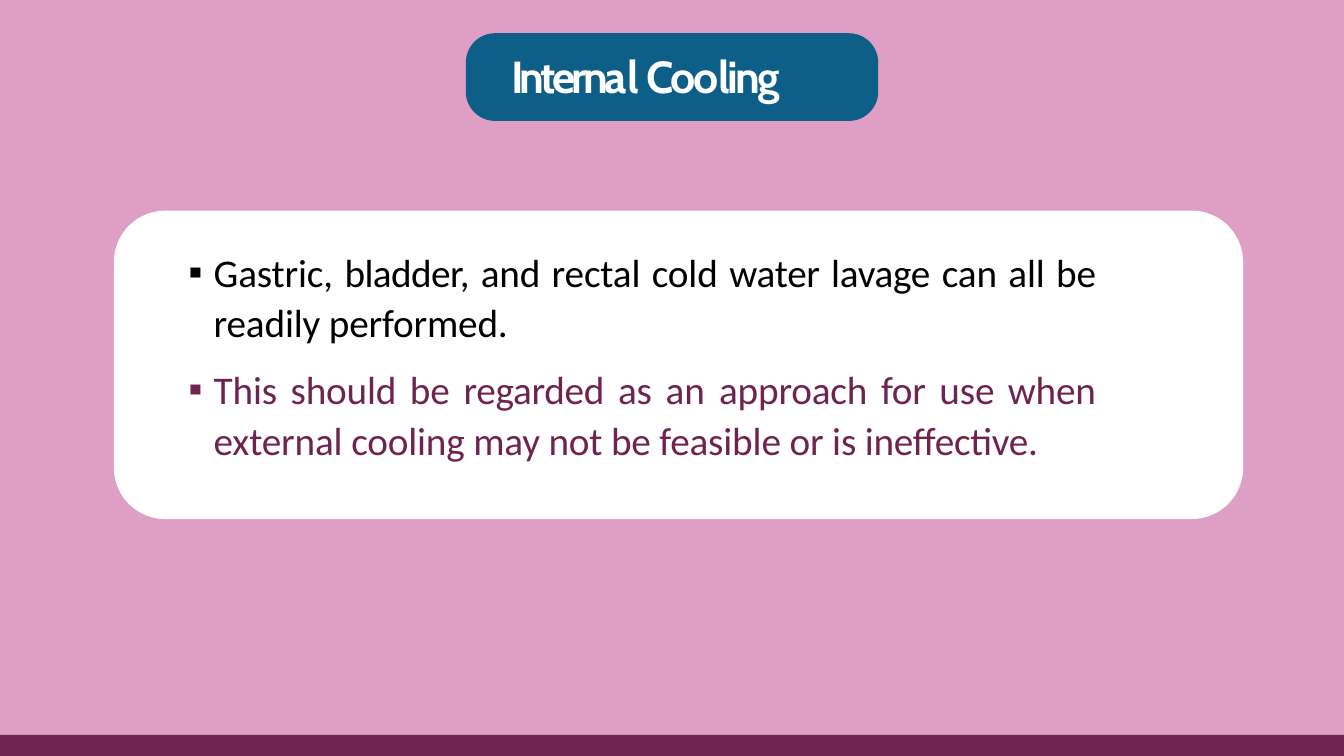
from lxml.etree import SubElement
from pptx import Presentation
from pptx.dml.color import RGBColor
from pptx.enum.shapes import MSO_SHAPE
from pptx.enum.text import MSO_ANCHOR, MSO_AUTO_SIZE, PP_ALIGN
from pptx.oxml.ns import qn
from pptx.util import Inches, Pt

PINK = RGBColor(0xDF, 0x9F, 0xC5)
PLUM = RGBColor(0x6F, 0x24, 0x50)
BLUE = RGBColor(0x0D, 0x5F, 0x87)
WHITE = RGBColor(0xFF, 0xFF, 0xFF)
BLACK = RGBColor(0, 0, 0)

WIDTH, HEIGHT, BAR = 13.33, 7.5, 0.21
TITLE = [("Interna", -2.6), ("l ", -1.4), ("Coo", -2.1), ("ling", -1.9)]
POINTS = [
    (BLACK, [("Gastric, ", -0.1), ("bladder, ", -0.4),
             ("and rectal cold ", -0.1), ("water lavage ", -0.2),
             ("can all be readily performed.", -0.1)]),
    (PLUM, [("This should be ", -0.1), ("regarded ", -0.2), ("as ", -0.1),
            ("an ", 0.1), ("approach ", -0.1), ("for ", -0.2),
            ("use when external cooling ", -0.1), ("may ", -0.2),
            ("not be feasible or is ", -0.1), ("ineffective.", -0.2)]),
]


def add_panel(s, box, color, radius=None):
    """Draw a plain filled panel, rounded when a radius is given."""
    kind = MSO_SHAPE.ROUNDED_RECTANGLE if radius else MSO_SHAPE.RECTANGLE
    sp = s.shapes.add_shape(kind, *map(Inches, box))
    if radius:
        sp.adjustments[0] = radius / min(box[2:])
    sp.fill.solid()
    sp.fill.fore_color.rgb = color
    sp.line.fill.background()
    sp.shadow.inherit = False


def place_text(sp, box):
    """Move a placeholder to its box, in front, and return its text frame."""
    sp.left, sp.top, sp.width, sp.height = map(Inches, box)
    sp.element.getparent().append(sp.element)
    tf = sp.text_frame
    tf.margin_left = tf.margin_right = tf.margin_bottom = 0
    tf.margin_top = Inches(0.01)
    tf.word_wrap = True
    tf.auto_size = MSO_AUTO_SIZE.NONE
    tf.vertical_anchor = MSO_ANCHOR.TOP
    return tf


def add_runs(p, runs, font, size, color, bold=False):
    """Add runs given as pairs of text and letter spacing in points."""
    for text, spacing in runs:
        r = p.add_run()
        r.text = text
        r.font.name, r.font.size, r.font.bold = font, Pt(size), bold
        r.font.color.rgb = color
        r.font._element.set("spc", str(round(spacing * 100)))


def add_bullet(p):
    """Give a paragraph a square bullet with a hanging indent."""
    pPr = p._p.get_or_add_pPr()
    pPr.set("marL", str(Inches(0.26)))
    pPr.set("marR", str(Inches(0.09)))
    pPr.set("indent", str(Inches(-0.25)))
    SubElement(pPr, qn("a:buFont"), typeface="Calibri")
    SubElement(pPr, qn("a:buChar"), char="▪")
    tabs = SubElement(pPr, qn("a:tabLst"))
    SubElement(tabs, qn("a:tab"), pos=str(Inches(0.26)), algn="l")


def add_backdrop(s):
    """Fill the slide and draw the bar along its foot."""
    add_panel(s, (0, 0, WIDTH, HEIGHT - BAR), PINK)
    add_panel(s, (0, HEIGHT - BAR, WIDTH, BAR), PLUM)


def add_title(s, box):
    """Draw the title badge and set the title inside it."""
    x, y, w, h = box
    add_panel(s, box, BLUE, 0.29)
    tf = place_text(s.shapes.title, (x + 0.45, y + 0.14, w - 0.9, h - 0.31))
    p = tf.paragraphs[0]
    p.alignment = PP_ALIGN.LEFT
    p.line_spacing = 1.0
    add_runs(p, TITLE, "Cabin", 32, WHITE, bold=True)


def add_points(s, box):
    """Draw the white card and list the points inside it."""
    x, y, w, h = box
    add_panel(s, box, WHITE, 0.51)
    tf = place_text(s.placeholders[1], (x + 0.73, y + 0.33, w - 2.1, h - 0.87))
    for i, (color, runs) in enumerate(POINTS):
        p = tf.add_paragraph() if i else tf.paragraphs[0]
        p.alignment = PP_ALIGN.JUSTIFY
        p.line_spacing = 1.07
        p.space_before = Pt(12 if i else 0)
        add_bullet(p)
        add_runs(p, runs, "Calibri", 28, color)


def main():
    """Build and save the slide."""
    prs = Presentation()
    prs.slide_width, prs.slide_height = Inches(WIDTH), Inches(HEIGHT)
    s = prs.slides.add_slide(prs.slide_layouts[1])
    add_backdrop(s)
    add_points(s, (1.13, 2.09, 11.2, 3.06))
    add_title(s, (4.62, 0.33, 4.09, 0.87))
    prs.save("out.pptx")


if __name__ == "__main__":
    main()
